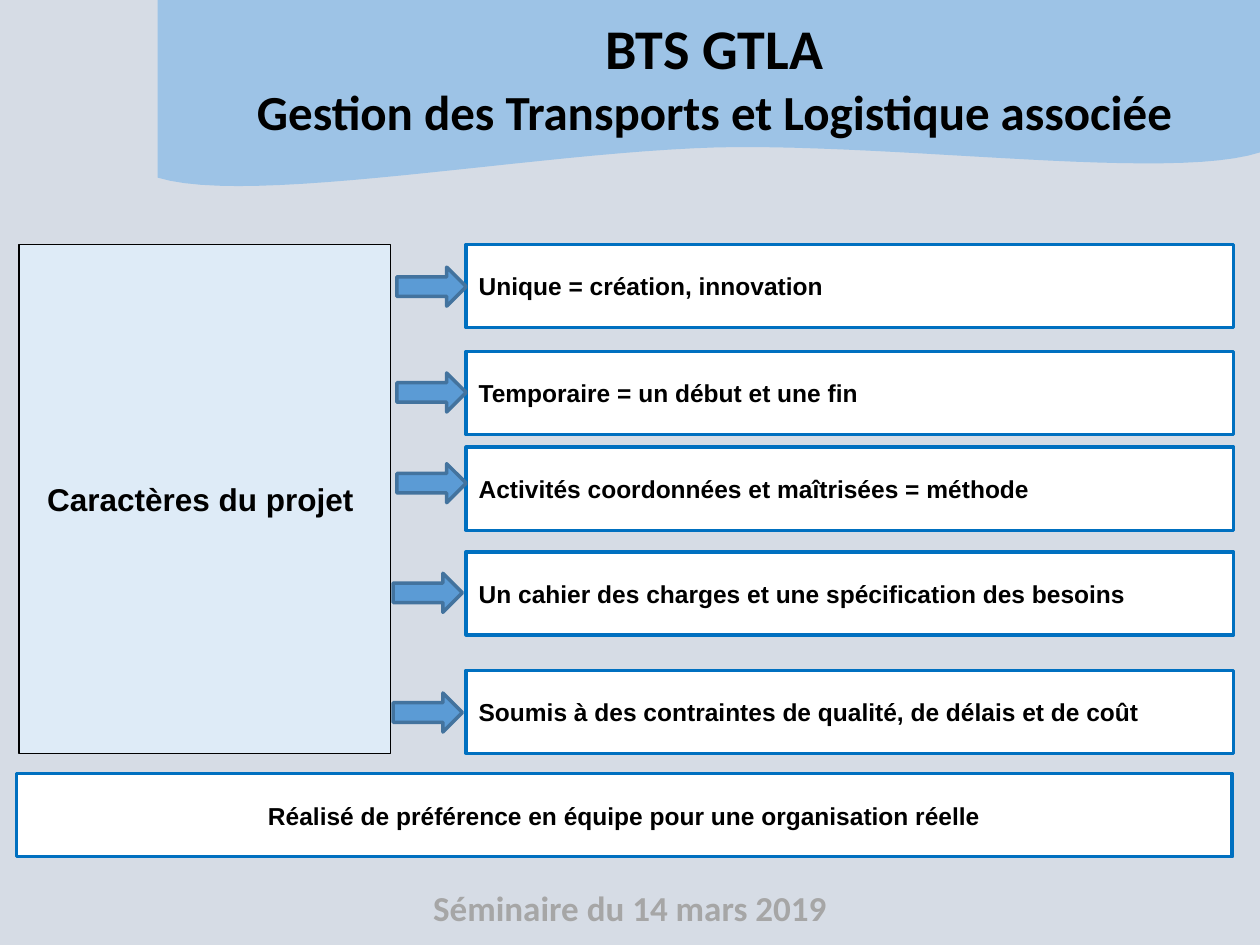
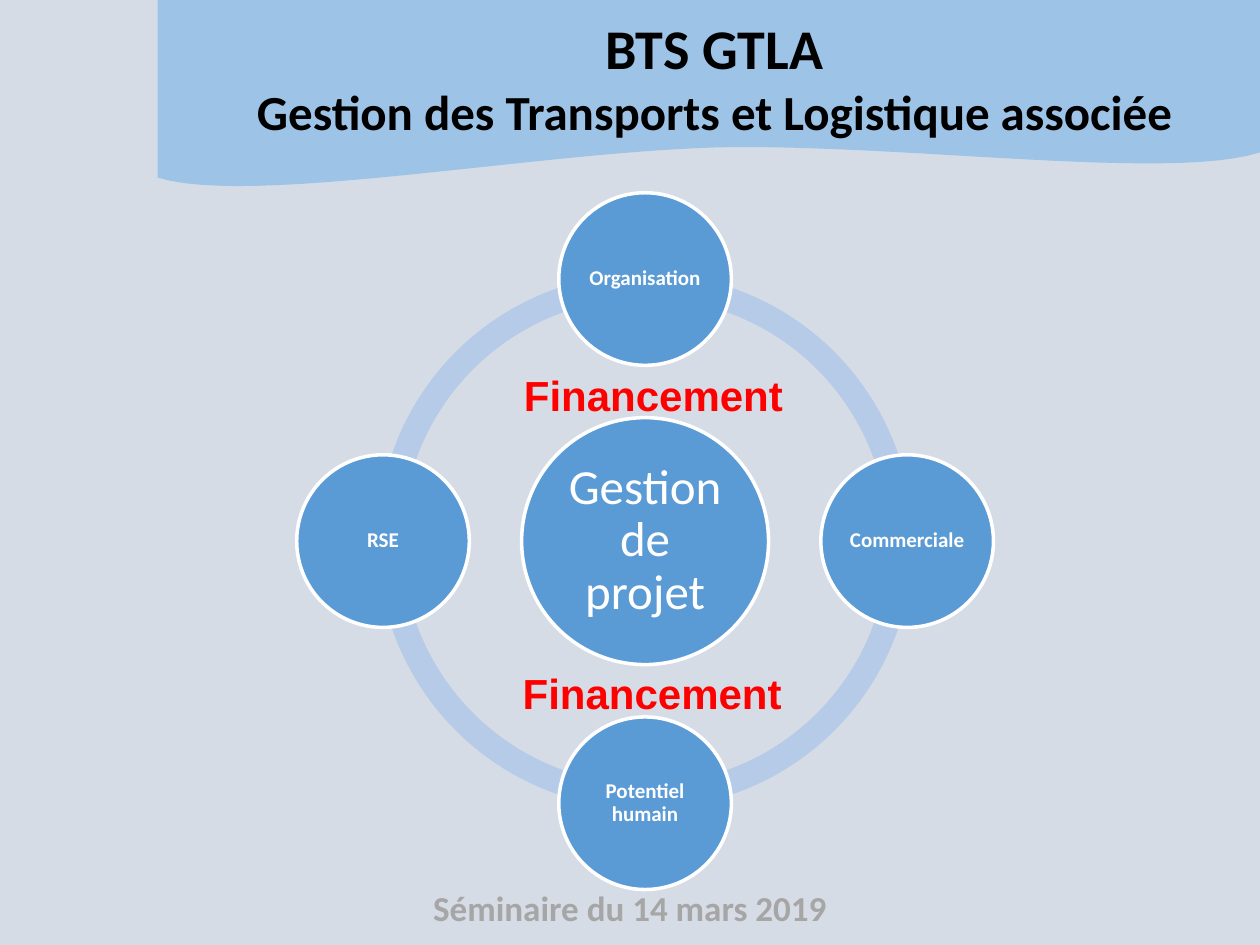
import math
from dataclasses import dataclass
from typing import NamedTuple, Optional

import pptx
import pptx.dml.color
import pptx.enum.shapes
import pptx.enum.text
import pptx.util

SHAPE = pptx.enum.shapes.MSO_SHAPE
ALIGN = pptx.enum.text.PP_ALIGN
ANCHOR = pptx.enum.text.MSO_ANCHOR

WIDTH = pptx.util.Inches(10)
HEIGHT = pptx.util.Inches(7.5)
COLS, ROWS = 100, 75


class Type(NamedTuple):
    size: float
    color: str
    font: str = "Arial"
    bold: bool = True


class Look(NamedTuple):
    fill: str
    line: Optional[str] = None
    weight: float = 2


@dataclass(frozen=True)
class Theme:
    page: str = "D6DCE5"
    wave: Look = Look("9DC3E6")
    panel: Look = Look("DEEBF7", "000000", 0.75)
    card: Look = Look("FFFFFF", "0070C0")
    arrow: Look = Look("5B9BD5", "43739E")
    ring: Look = Look("B5CBE7")
    node: Look = Look("5B9BD5", "FFFFFF")
    head: Type = Type(32, "000000", "Calibri")
    subhead: Type = Type(28, "000000", "Calibri")
    foot: Type = Type(20, "A6A6A6", "Calibri")
    topic: Type = Type(18, "000000")
    item: Type = Type(14, "000000")
    core: Type = Type(28, "FFFFFF", "Calibri", False)
    label: Type = Type(12, "FFFFFF", "Calibri")
    alert: Type = Type(24, "FF0000")


THEME = Theme()


class Box(NamedTuple):
    left: float
    top: float
    width: float
    height: float

    def place(self) -> tuple:
        return col(self.left), row(self.top), col(self.width), row(self.height)


class Trait(NamedTuple):
    text: str
    top: float
    arrow_left: float
    arrow_top: float


class Node(NamedTuple):
    text: str
    angle: float


TRAITS = [
    Trait("Unique = création, innovation", 19.4, 31.5, 21.2),
    Trait("Temporaire = un début et une fin", 27.9, 31.5, 29.6),
    Trait("Activités coordonnées et maîtrisées = méthode", 35.5, 31.5, 36.8),
    Trait("Un cahier des charges et une spécification des besoins", 43.8, 31.2, 45.5),
    Trait("Soumis à des contraintes de qualité, de délais et de coût", 53.2, 31.2, 55),
]

NODES = [
    Node("Organisation", -90),
    Node("Commerciale", 0),
    Node("Potentiel humain", 90),
    Node("RSE", 180),
]

ALERTS = [Box(40.6, 28.8, 24.4, 5.1), Box(40.5, 52.5, 24.4, 5.1)]

WAVE_START = (100, 12.1)
WAVE_CURVES = [
    ((92.9, 14.4), (71.6, 11.4), (57, 11.7)),
    ((42.4, 12.1), (19.9, 16.4), (12.5, 14.1)),
]
WAVE_STEPS = 24


def col(count: float) -> int:
    return round(WIDTH * count / COLS)


def row(count: float) -> int:
    return round(HEIGHT * count / ROWS)


def tint(code: str) -> pptx.dml.color.RGBColor:
    return pptx.dml.color.RGBColor.from_string(code)


def paint(shape, look: Look) -> None:
    shape.shadow.inherit = False
    shape.fill.solid()
    shape.fill.fore_color.rgb = tint(look.fill)
    if look.line:
        shape.line.color.rgb = tint(look.line)
        shape.line.width = pptx.util.Pt(look.weight)
    else:
        shape.line.fill.background()


def draw(slide, kind, box: Box, look: Look):
    shape = slide.shapes.add_shape(kind, *box.place())
    paint(shape, look)
    return shape


def style(par, kind: Type, align) -> None:
    par.alignment = align
    for run in par.runs:
        run.font.size = pptx.util.Pt(kind.size)
        run.font.name = kind.font
        run.font.bold = kind.bold
        run.font.color.rgb = tint(kind.color)


def write(shape, text: str, kind: Type, align=ALIGN.CENTER, anchor=ANCHOR.MIDDLE):
    frame = shape.text_frame
    frame.text = text
    frame.word_wrap = True
    frame.vertical_anchor = anchor
    style(frame.paragraphs[0], kind, align)
    return frame


def add_text(slide, box: Box, text: str, kind: Type, align=ALIGN.CENTER) -> None:
    shape = slide.shapes.add_textbox(*box.place())
    write(shape, text, kind, align, ANCHOR.TOP)


def bend(start: tuple, curve: tuple) -> list:
    points = []
    for step in range(1, WAVE_STEPS + 1):
        t = step / WAVE_STEPS
        parts = ((1 - t) ** 3, 3 * t * (1 - t) ** 2, 3 * t * t * (1 - t), t ** 3)
        x, y = (sum(p * v for p, v in zip(parts, axis)) for axis in zip(start, *curve))
        points.append((col(x), row(y)))
    return points


def add_wave(slide):
    points = [(col(100), 0), (col(WAVE_START[0]), row(WAVE_START[1]))]
    start = WAVE_START
    for curve in WAVE_CURVES:
        points += bend(start, curve)
        start = curve[-1]
    build = slide.shapes.build_freeform(col(12.5), 0)
    build.add_line_segments(points, close=True)
    wave = build.convert_to_shape()
    paint(wave, THEME.wave)
    return wave


def add_page(deck):
    slide = deck.slides.add_slide(deck.slide_layouts[5])
    slide.background.fill.solid()
    slide.background.fill.fore_color.rgb = tint(THEME.page)
    title = slide.shapes.title
    title.left, title.top, title.width, title.height = Box(18.8, 0.6, 75.8, 11.1).place()
    frame = title.text_frame
    frame.text = "BTS GTLA\nGestion des Transports et Logistique associée"
    frame.auto_size = pptx.enum.text.MSO_AUTO_SIZE.NONE
    frame.vertical_anchor = ANCHOR.TOP
    for par, kind in zip(frame.paragraphs, (THEME.head, THEME.subhead)):
        style(par, kind, ALIGN.CENTER)
    title.element.addprevious(add_wave(slide).element)
    add_text(slide, Box(25, 69.9, 50, 4.4), "Séminaire du 14 mars 2019", THEME.foot)
    return slide


def add_traits(deck) -> None:
    slide = add_page(deck)
    panel = draw(slide, SHAPE.RECTANGLE, Box(1.5, 19.4, 29.5, 40.4), THEME.panel)
    write(panel, "Caractères du projet ", THEME.topic).word_wrap = False
    for trait in TRAITS:
        card = draw(slide, SHAPE.RECTANGLE, Box(37, trait.top, 60.9, 6.6), THEME.card)
        write(card, trait.text, THEME.item, ALIGN.LEFT)
        spot = Box(trait.arrow_left, trait.arrow_top, 5.5, 3.1)
        draw(slide, SHAPE.RIGHT_ARROW, spot, THEME.arrow)
    base = draw(slide, SHAPE.RECTANGLE, Box(1.3, 61.4, 96.5, 6.6), THEME.card)
    write(base, "Réalisé de préférence en équipe pour une organisation réelle", THEME.item)


def square(x: float, y: float, size: float) -> Box:
    return Box(x - size / 2, y - size / 2, size, size)


def add_node(slide, box: Box, text: str, kind: Type, inset: float) -> None:
    node = draw(slide, SHAPE.OVAL, box, THEME.node)
    frame = write(node, text, kind)
    frame.margin_left = frame.margin_right = col(inset)
    frame.margin_top = frame.margin_bottom = row(inset)
    frame.paragraphs[0].line_spacing = 0.9


def add_cycle(deck) -> None:
    slide = add_page(deck)
    x, y, reach = 51.2, 42.95, 20.8
    quarter = 54
    for turn in range(4):
        arc = draw(slide, SHAPE.BLOCK_ARC, square(x, y, 42.5), THEME.ring)
        arc.adjustments[0] = quarter * turn
        arc.adjustments[1] = quarter * ((turn + 1) % 4)
        arc.adjustments[2] = 0.046
    add_node(slide, square(x, y, 19.6), "Gestion de projet", THEME.core, 0.4)
    for node in NODES:
        angle = math.radians(node.angle)
        spot = square(x + reach * math.cos(angle), y + reach * math.sin(angle), 13.7)
        add_node(slide, spot, node.text, THEME.label, 0.2)
    for box in ALERTS:
        add_text(slide, box, "Financement", THEME.alert, ALIGN.LEFT)


def main() -> None:
    deck = pptx.Presentation()
    deck.slide_width, deck.slide_height = WIDTH, HEIGHT
    add_traits(deck)
    add_cycle(deck)
    deck.save("out.pptx")


if __name__ == "__main__":
    main()
